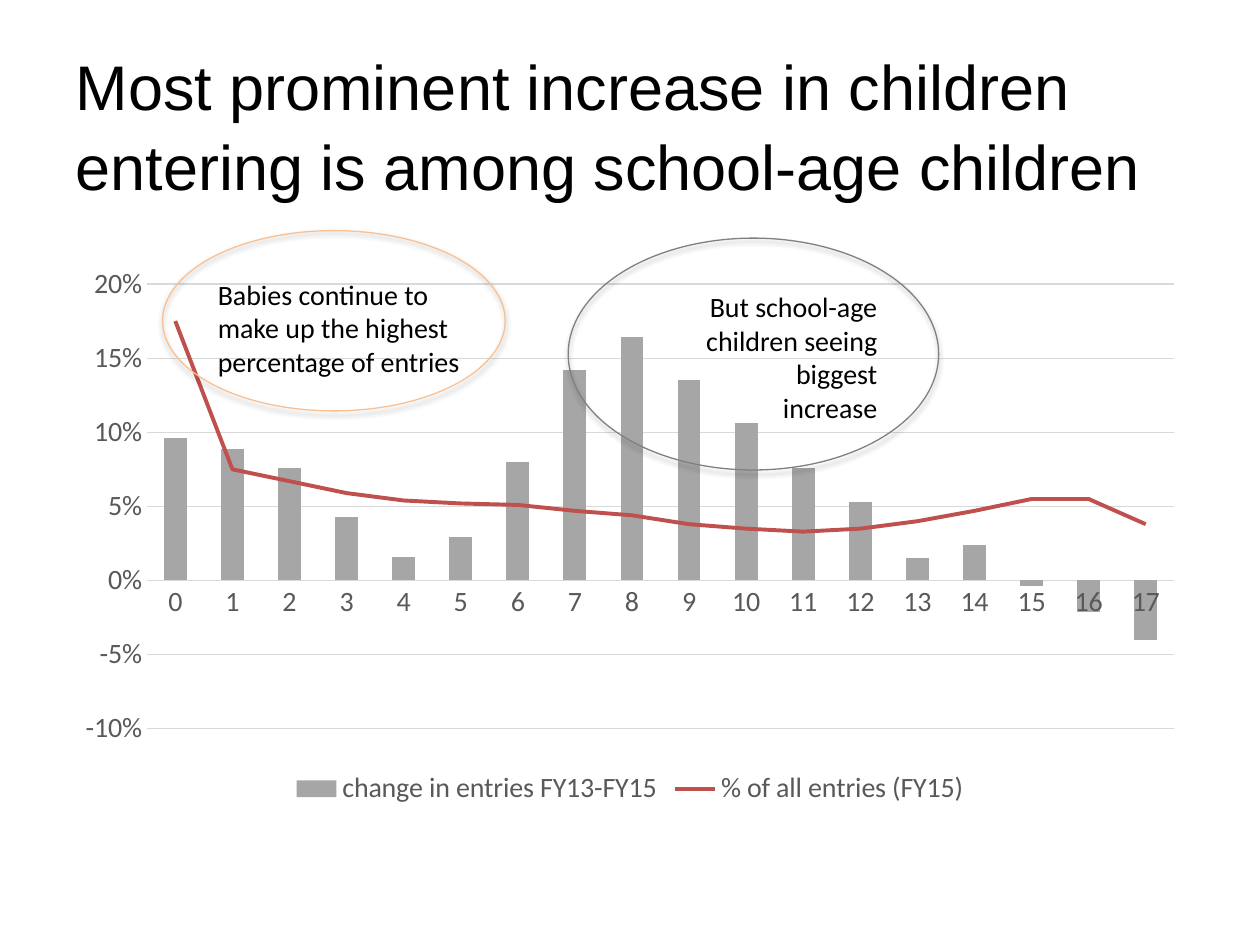
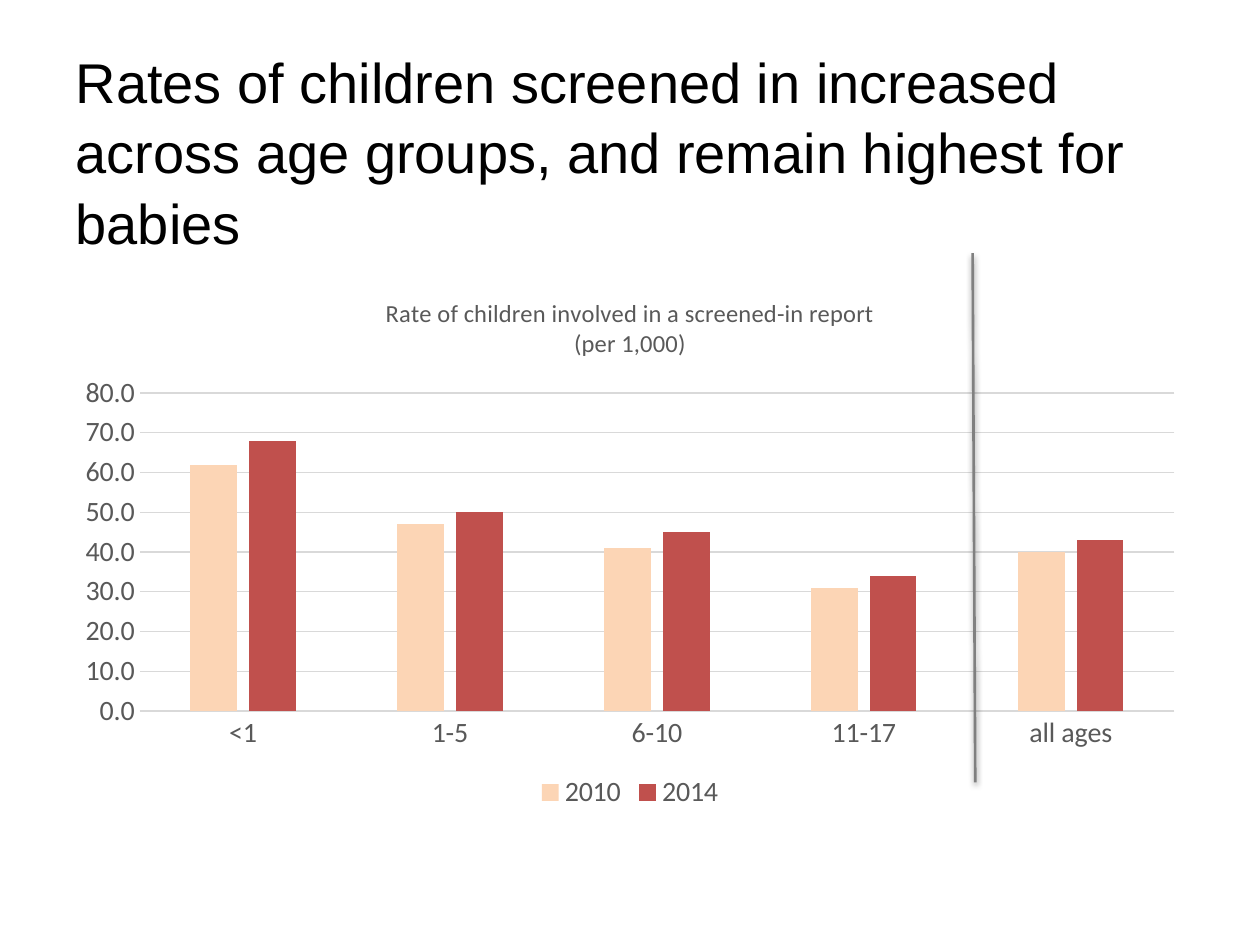
from lxml.etree import SubElement
from pptx import Presentation
from pptx.chart.data import CategoryChartData
from pptx.dml.color import RGBColor
from pptx.enum.chart import XL_CHART_TYPE as ChartType, XL_LEGEND_POSITION as LegendPosition, XL_TICK_MARK as TickMark
from pptx.enum.shapes import MSO_CONNECTOR as Connector, MSO_SHAPE as Shape
from pptx.enum.text import MSO_ANCHOR as Anchor, MSO_AUTO_SIZE as AutoSize, PP_ALIGN as Align
from pptx.oxml import parse_xml
from pptx.oxml.ns import nsdecls, qn
from pptx.util import Pt

BLACK, LABEL, GRID = "000000", "595959", "D9D9D9"
GRAY, RED, PEACH, ORANGE, RULE = "A6A6A6", "C0504D", "FCD5B5", "FAC090", "808080"


def color(hex_code):
    return RGBColor.from_string(hex_code)


def style_font(font, size, hex_code, name="Calibri"):
    font.name, font.size, font.bold = name, Pt(size), False
    font.color.rgb = color(hex_code)


def style_line(line, hex_code, width):
    line.color.rgb = color(hex_code)
    line.width = Pt(width)


def add_shadow(shape, opacity, distance):
    properties = shape._element.spPr
    for effects in properties.findall(qn("a:effectLst")):
        properties.remove(effects)
    effects = SubElement(properties, qn("a:effectLst"))
    shadow = SubElement(effects, qn("a:outerShdw"), blurRad=str(Pt(3.1)), dist=str(Pt(distance)),
                        dir="5400000", rotWithShape="0")
    tint = SubElement(shadow, qn("a:srgbClr"), val=BLACK)
    SubElement(tint, qn("a:alpha"), val=str(opacity * 1000))


def add_titled_slide(deck, headline, size, width):
    slide = deck.slides.add_slide(deck.slide_layouts[5])
    title = slide.shapes.title
    title.left, title.top, title.width, title.height = Pt(36), Pt(21.6), Pt(width), Pt(90)
    frame = title.text_frame
    frame.text = headline
    frame.word_wrap, frame.auto_size, frame.vertical_anchor = True, AutoSize.NONE, Anchor.TOP
    paragraph = frame.paragraphs[0]
    paragraph.alignment, paragraph.line_spacing = Align.LEFT, 1.05
    style_font(paragraph.runs[0].font, size, BLACK, "Arial")
    return slide


def add_age_chart(slide, box, ages, series, number_format, scale, gap, overlap=0):
    data = CategoryChartData(number_format=number_format)
    data.categories = ages
    for name, values, _ in series:
        data.add_series(name, values)
    chart = slide.shapes.add_chart(ChartType.COLUMN_CLUSTERED, *map(Pt, box), data).chart
    style_font(chart.font, 10, BLACK)
    chart.has_title = False
    chart.has_legend = True
    chart.legend.position = LegendPosition.BOTTOM
    chart.legend.include_in_layout = False
    style_font(chart.legend.font, 16, LABEL)

    age_axis, value_axis = chart.category_axis, chart.value_axis
    for axis in (age_axis, value_axis):
        axis.major_tick_mark = axis.minor_tick_mark = TickMark.NONE
        style_font(axis.tick_labels.font, 16, LABEL)
    style_line(age_axis.format.line, GRID, 0.75)
    value_axis.minimum_scale, value_axis.maximum_scale, value_axis.major_unit = scale
    value_axis.tick_labels.number_format = number_format
    value_axis.tick_labels.number_format_is_linked = False
    value_axis.format.line.fill.background()
    style_line(value_axis.major_gridlines.format.line, GRID, 0.75)

    columns = chart.plots[0]
    columns.gap_width, columns.overlap, columns.vary_by_categories = gap, overlap, False
    for column, (_, _, hex_code) in zip(columns.series, series):
        column.invert_if_negative = False
        column.format.fill.solid()
        column.format.fill.fore_color.rgb = color(hex_code)
    return chart


def turn_last_series_into_line(chart, hex_code):
    columns = chart._chartSpace.find(".//" + qn("c:barChart"))
    share = columns.findall(qn("c:ser"))[-1]
    for tag in ("c:invertIfNegative", "c:spPr"):
        share.remove(share.find(qn(tag)))
    lines = parse_xml(f'<c:lineChart {nsdecls("c")}><c:grouping val="standard"/>'
                      '<c:varyColors val="0"/></c:lineChart>')
    lines.append(share)
    share.find(qn("c:tx")).addnext(
        parse_xml(f'<c:marker {nsdecls("c")}><c:symbol val="none"/></c:marker>'))
    SubElement(lines, qn("c:marker"), val="1")
    for axis_id in columns.findall(qn("c:axId")):
        SubElement(lines, qn("c:axId"), val=axis_id.get("val"))
    columns.addnext(lines)
    trend = chart.plots[1].series[0]
    trend.smooth = False
    style_line(trend.format.line, hex_code, 2.25)


def add_callout(slide, box, inner, message, outline, align):
    left, top, width, height = box
    oval = slide.shapes.add_shape(Shape.OVAL, *map(Pt, box))
    oval.fill.background()
    style_line(oval.line, outline, 0.75)
    add_shadow(oval, 35, 1.8)
    dx, dy, inner_width, inner_height = inner
    note = slide.shapes.add_textbox(Pt(left + dx), Pt(top + dy), Pt(inner_width), Pt(inner_height))
    frame = note.text_frame
    frame.text = message
    frame.word_wrap, frame.auto_size = True, AutoSize.SHAPE_TO_FIT_TEXT
    frame.paragraphs[0].alignment = align
    style_font(frame.paragraphs[0].runs[0].font, 16, BLACK)


def add_entries_slide(deck):
    slide = add_titled_slide(
        deck, "Most prominent increase in children entering is among school-age children", 36, 648)
    change = (0.096, 0.089, 0.076, 0.043, 0.016, 0.029, 0.08, 0.142, 0.164,
              0.135, 0.106, 0.076, 0.053, 0.015, 0.024, -0.004, -0.021, -0.04)
    share = (0.175, 0.075, 0.067, 0.059, 0.054, 0.052, 0.051, 0.047, 0.044,
             0.038, 0.035, 0.033, 0.035, 0.04, 0.047, 0.055, 0.055, 0.038)
    chart = add_age_chart(
        slide, (36, 146.2, 648, 317.5), [str(age) for age in range(18)],
        [("change in entries FY13-FY15", change, GRAY), ("% of all entries (FY15)", share, RED)],
        "0%", (-0.1, 0.2, 0.05), 150)
    turn_last_series_into_line(chart, RED)
    add_callout(slide, (92.9, 131.8, 195.8, 103), (24.5, 23, 153.4, 87.1),
                "Babies continue to make up the highest percentage of entries", ORANGE, Align.LEFT)
    add_callout(slide, (324.7, 136.1, 211.7, 132.5), (66.3, 25.9, 117.4, 85),
                "But school-age children seeing biggest increase", RULE, Align.RIGHT)


def add_rates_slide(deck):
    slide = add_titled_slide(
        deck, "Rates of children screened in increased across age groups, and remain highest for babies",
        32, 657.4)
    chart = add_age_chart(
        slide, (36, 157, 648, 308.9), ["<1", "1-5", "6-10", "11-17", "all ages"],
        [("2010", (62, 47, 41, 31, 40), PEACH), ("2014", (68, 50, 45, 34, 43), RED)],
        "#,##0.0", (0, 80, 10), 219, -27)
    heading = chart.chart_title.text_frame
    heading.text = "Rate of children involved in a screened-in report\n(per 1,000)"
    for paragraph in heading.paragraphs:
        style_font(paragraph.runs[0].font, 14, LABEL)
    divider = slide.shapes.add_connector(
        Connector.STRAIGHT, Pt(555.8), Pt(144.7), Pt(557.3), Pt(447.1))
    style_line(divider.line, RULE, 1.5)
    add_shadow(divider, 38, 1.6)


def main():
    deck = Presentation()
    deck.slide_width, deck.slide_height = Pt(720), Pt(540)
    add_entries_slide(deck)
    add_rates_slide(deck)
    deck.save("out.pptx")


if __name__ == "__main__":
    main()
